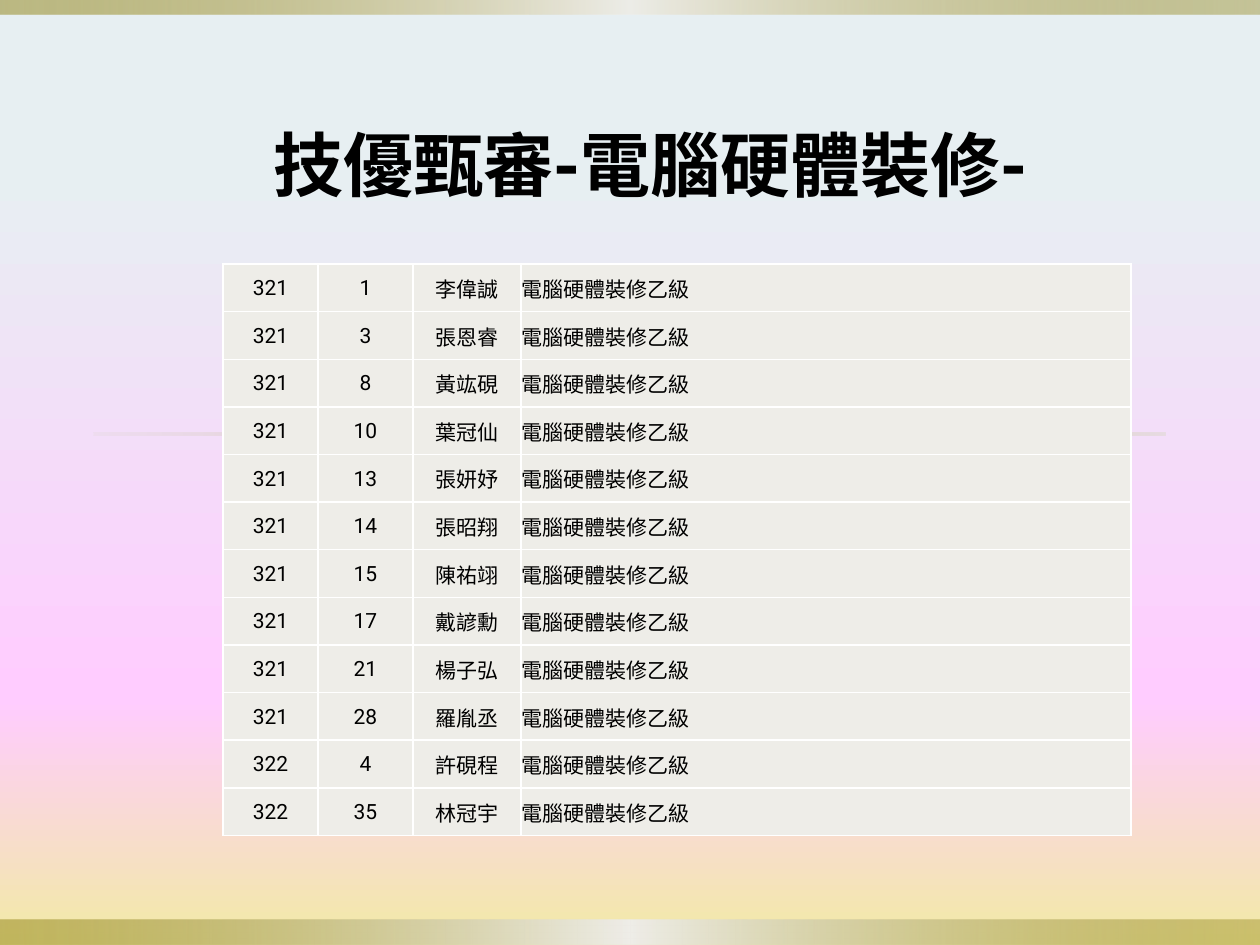
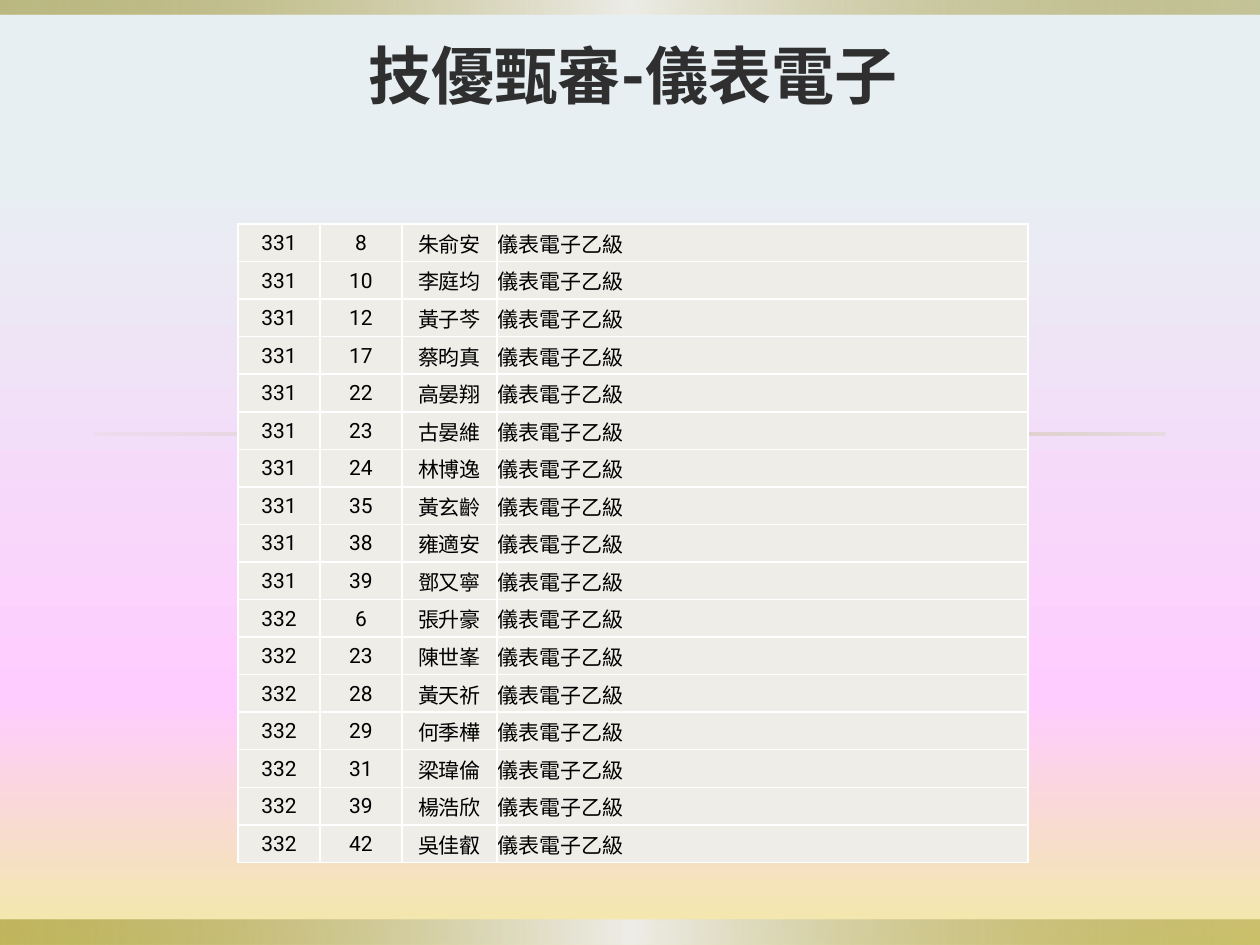
from lxml.etree import SubElement as Sub
from pptx import Presentation
from pptx.dml.color import RGBColor as RGB
from pptx.enum.shapes import MSO_SHAPE
from pptx.enum.text import MSO_ANCHOR as ANCHOR, PP_ALIGN as ALIGN
from pptx.oxml.ns import qn
from pptx.util import Emu, Pt

FONT = "Roboto"
C = {
    "sky": "E7EFF2", "pink": "FFCCFF", "sand": "F2EAA5", "olive": "918415",
    "stone": "DCD9CC", "cell": "EEEDE8", "border": "FFFFFF",
    "black": "000000", "dark": "2F2F2F",
}
BACKGROUND = [(18, "sky", 100), (74, "pink", 100), (100, "sand", 100)]
BAND = [(0, "olive", 50), (50, "cell", 100), (100, "olive", 40)]
RULE = [(0, "stone", 20), (50, "olive", 40), (100, "stone", 50)]
STRIPS = [
    ((0, 920, 1260, 25), BAND),
    ((0, 0, 1260, 15), BAND),
    ((94, 433, 1071, 3), RULE),
]
SLIDES = [
    {
        "title": "技優甄審-電腦硬體裝修-",
        "title_box": (115, 125, 1071, 110),
        "title_font": {"size": Pt(40), "color": "black"},
        "skill": "電腦硬體裝修乙級",
        "table_at": (223, 264),
        "height": 572,
        "cols": (95, 95, 108, 610),
        "classes": {
            321: [(1, "李偉誠"), (3, "張恩睿"), (8, "黃竑硯"), (10, "葉冠仙"),
                  (13, "張妍妤"), (14, "張昭翔"), (15, "陳祐翊"), (17, "戴諺勳"),
                  (21, "楊子弘"), (28, "羅胤丞")],
            322: [(4, "許硯程"), (35, "林冠宇")],
        },
    },
    {
        "title": "技優甄審-儀表電子",
        "title_box": (25, 39, 1216, 57),
        "title_font": {"size": Pt(36), "color": "dark"},
        "skill": "儀表電子乙級",
        "table_at": (238, 224),
        "height": 639,
        "cols": (82, 82, 95, 531),
        "classes": {
            331: [(8, "朱俞安"), (10, "李庭均"), (12, "黃子芩"), (17, "蔡昀真"),
                  (22, "高晏翔"), (23, "古晏維"), (24, "林博逸"), (35, "黃玄齡"),
                  (38, "雍適安"), (39, "鄧又寧")],
            332: [(6, "張升豪"), (23, "陳世峯"), (28, "黃天祈"), (29, "何季樺"),
                  (31, "梁瑋倫"), (39, "楊浩欣"), (42, "吳佳叡")],
        },
    },
]


def px(n):
    return Emu(round(n * 914400 / 126))


def set_all(obj, values):
    for name, value in values.items():
        setattr(obj, name, value)


def add_color(parent, color, opacity=100):
    clr = Sub(parent, qn("a:srgbClr"), val=C[color])
    if opacity < 100:
        Sub(clr, qn("a:alpha"), val=str(opacity * 1000))


def paint_gradient(owner, fill, stops, angle):
    fill.gradient()
    grad = owner._element.find(".//" + qn("a:gradFill"))
    grad.find(qn("a:lin")).set("ang", str(angle * 60000))
    gs_list = grad.find(qn("a:gsLst"))
    for gs in list(gs_list):
        gs_list.remove(gs)
    for pos, color, opacity in stops:
        add_color(Sub(gs_list, qn("a:gs"), pos=str(pos * 1000)), color, opacity)


def write(tf, text, align, size, color, bold=False):
    p = tf.paragraphs[0]
    p.alignment = align
    r = p.add_run()
    r.text = text
    set_all(r.font, {"name": FONT, "size": size, "bold": bold})
    r.font.color.rgb = RGB.from_string(C[color])
    return p


def add_base(prs):
    s = prs.slides.add_slide(prs.slide_layouts[6])
    paint_gradient(s, s.background.fill, BACKGROUND, 90)
    for box, stops in STRIPS:
        sp = s.shapes.add_shape(MSO_SHAPE.RECTANGLE, *map(px, box))
        sp.shadow.inherit = False
        sp.line.fill.background()
        paint_gradient(sp, sp.fill, stops, 0)
    return s


def add_title(s, text, box, font):
    tf = s.shapes.add_textbox(*map(px, box)).text_frame
    set_all(tf, {"word_wrap": True, "vertical_anchor": ANCHOR.TOP})
    write(tf, text, ALIGN.CENTER, bold=True, **font).line_spacing = 0.9


def format_cell(cell):
    set_all(cell, {
        "vertical_anchor": ANCHOR.MIDDLE, "margin_left": px(1),
        "margin_top": px(1), "margin_right": px(1), "margin_bottom": 0,
    })
    tc_pr = cell._tc.get_or_add_tcPr()
    for side in ("lnL", "lnR", "lnT", "lnB"):
        ln = Sub(tc_pr, qn("a:" + side), w=str(Pt(1)))
        add_color(Sub(ln, qn("a:solidFill")), "border")
    cell.fill.solid()
    cell.fill.fore_color.rgb = RGB.from_string(C["cell"])


def add_roster(s, data):
    rows = [(group, seat, name, data["skill"])
            for group, students in data["classes"].items()
            for seat, name in students]
    cols, height = data["cols"], data["height"]
    size = (sum(cols), height)
    table = s.shapes.add_table(
        len(rows), len(cols), *map(px, data["table_at"] + size)).table
    set_all(table, {"first_row": False, "horz_banding": False})
    for col, width in zip(table.columns, cols):
        col.width = px(width)
    for i, values in enumerate(rows):
        table.rows[i].height = px(height / len(rows))
        for j, value in enumerate(values):
            cell = table.cell(i, j)
            format_cell(cell)
            align = ALIGN.LEFT if j == len(cols) - 1 else ALIGN.CENTER
            write(cell.text_frame, str(value), align, Pt(12), "black")


def main():
    prs = Presentation()
    set_all(prs, {"slide_width": px(1260), "slide_height": px(945)})
    for data in SLIDES:
        s = add_base(prs)
        add_title(s, data["title"], data["title_box"], data["title_font"])
        add_roster(s, data)
    prs.save("out.pptx")


if __name__ == "__main__":
    main()
